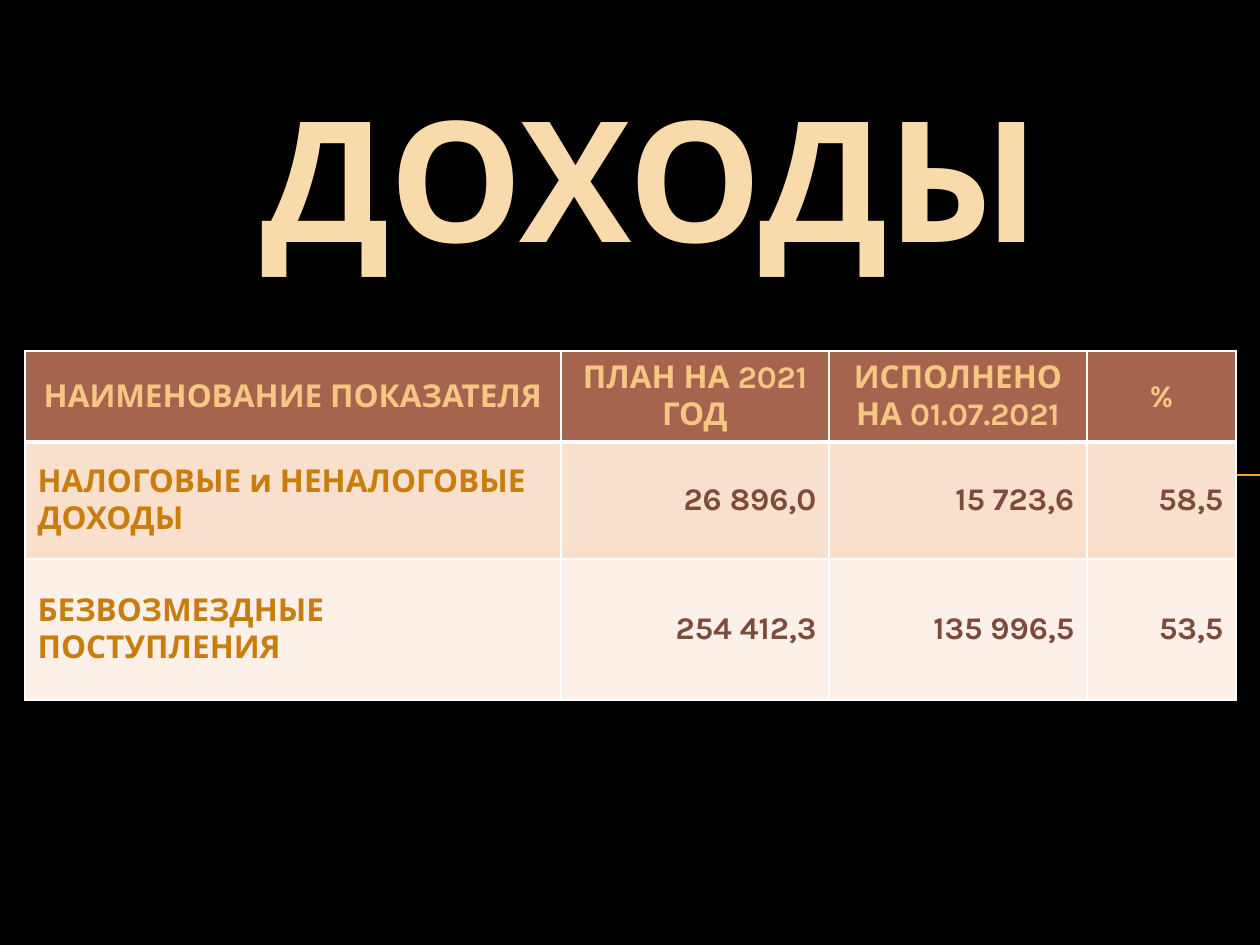
from lxml.etree import SubElement
from pptx import Presentation
from pptx.dml.color import RGBColor
from pptx.enum.shapes import MSO_CONNECTOR
from pptx.enum.text import MSO_ANCHOR, PP_ALIGN
from pptx.oxml import parse_xml
from pptx.oxml.ns import nsdecls, qn
from pptx.util import Pt

EMU_PER_PX = 914400 / 126
FONT = "Karla"
COLORS = {
    "background": "000000", "rule": "F0A22E", "title": "F9DAAB",
    "accent": "C87D0E", "heading": "F6C782", "figure": "7C4B3B",
    "header_fill": "A5644E", "taxes_fill": "F9E0CD",
    "grants_fill": "FCF0E8", "border": "FFFFFF",
}
COLUMN_WIDTHS = [536, 268, 258, 149]
ROW_HEIGHTS = [91, 117, 141]
ROW_FILLS = ["header_fill", "taxes_fill", "grants_fill"]
INCOME = [
    ["НАИМЕНОВАНИЕ ПОКАЗАТЕЛЯ", "ПЛАН НА 2021 ГОД", "ИСПОЛНЕНО НА 01.07.2021", "%"],
    ["НАЛОГОВЫЕ и НЕНАЛОГОВЫЕ ДОХОДЫ", "26 896,0", "15 723,6", "58,5"],
    ["БЕЗВОЗМЕЗДНЫЕ ПОСТУПЛЕНИЯ", "254 412,3", "135 996,5", "53,5"],
]


def px(length):
    """Turn pixels into EMU."""
    return round(length * EMU_PER_PX)


def color(name):
    """Look up a colour by its role."""
    return RGBColor.from_string(COLORS[name])


def add_run(paragraph, text, size, color_name, align):
    """Add one bold run and align its paragraph."""
    paragraph.alignment = align
    run = paragraph.add_run()
    run.text = text
    run.font.name = FONT
    run.font.size = Pt(size)
    run.font.bold = True
    run.font.color.rgb = color(color_name)
    return run


def add_rule(slide, left, top, width):
    """Draw the thin horizontal rule."""
    rule = slide.shapes.add_connector(
        MSO_CONNECTOR.STRAIGHT, px(left), px(top), px(left + width), px(top))
    rule.line.color.rgb = color("rule")
    rule.line.width = Pt(0.75)
    SubElement(rule._element.spPr, qn("a:effectLst"))


def add_title(slide, left, top, width, height):
    """Write the outlined slide title."""
    title = slide.shapes.add_textbox(px(left), px(top), px(width), px(height))
    frame = title.text_frame
    frame.word_wrap = True
    frame.vertical_anchor = MSO_ANCHOR.TOP
    frame.margin_top = px(20)
    run = add_run(frame.paragraphs[0], "ДОХОДЫ", 96, "title", PP_ALIGN.CENTER)
    outline = parse_xml(
        f'<a:ln {nsdecls("a")} w="{Pt(0.15)}"><a:solidFill>'
        f'<a:srgbClr val="{COLORS["accent"]}"/></a:solidFill></a:ln>')
    run.font._element.insert(0, outline)


def add_borders(cell, top, bottom):
    """Give a cell white borders with the given top and bottom widths."""
    properties = cell._tc.get_or_add_tcPr()
    for side, width in (("L", 1), ("R", 1), ("T", top), ("B", bottom)):
        properties.append(parse_xml(
            f'<a:ln{side} {nsdecls("a")} w="{Pt(width)}"><a:solidFill>'
            f'<a:srgbClr val="{COLORS["border"]}"/></a:solidFill></a:ln{side}>'))


def cell_style(row, column):
    """Return the text colour and alignment for a table position."""
    if row == 0:
        return "heading", PP_ALIGN.CENTER
    if column == 0:
        return "accent", PP_ALIGN.LEFT
    return "figure", PP_ALIGN.RIGHT


def add_income_table(slide, left, top):
    """Build the table of planned and received income."""
    table = slide.shapes.add_table(
        len(ROW_HEIGHTS), len(COLUMN_WIDTHS), px(left), px(top),
        px(sum(COLUMN_WIDTHS)), px(sum(ROW_HEIGHTS))).table
    for column, width in zip(table.columns, COLUMN_WIDTHS):
        column.width = px(width)
    for row, height in zip(table.rows, ROW_HEIGHTS):
        row.height = px(height)
    for r, entries in enumerate(INCOME):
        for c, entry in enumerate(entries):
            cell = table.cell(r, c)
            add_borders(cell, top=3 if r == 1 else 1, bottom=3 if r == 0 else 1)
            cell.fill.solid()
            cell.fill.fore_color.rgb = color(ROW_FILLS[r])
            cell.vertical_anchor = MSO_ANCHOR.MIDDLE
            add_run(cell.text_frame.paragraphs[0], entry, 18, *cell_style(r, c))


def main():
    """Build and save the income slide."""
    presentation = Presentation()
    presentation.slide_width = px(1260)
    presentation.slide_height = px(945)
    slide = presentation.slides.add_slide(presentation.slide_layouts[6])
    slide.background.fill.solid()
    slide.background.fill.fore_color.rgb = color("background")
    add_rule(slide, 71, 475, 1189)
    add_title(slide, 115, 55, 1071, 188)
    add_income_table(slide, 25, 351)
    presentation.save("out.pptx")


if __name__ == "__main__":
    main()
